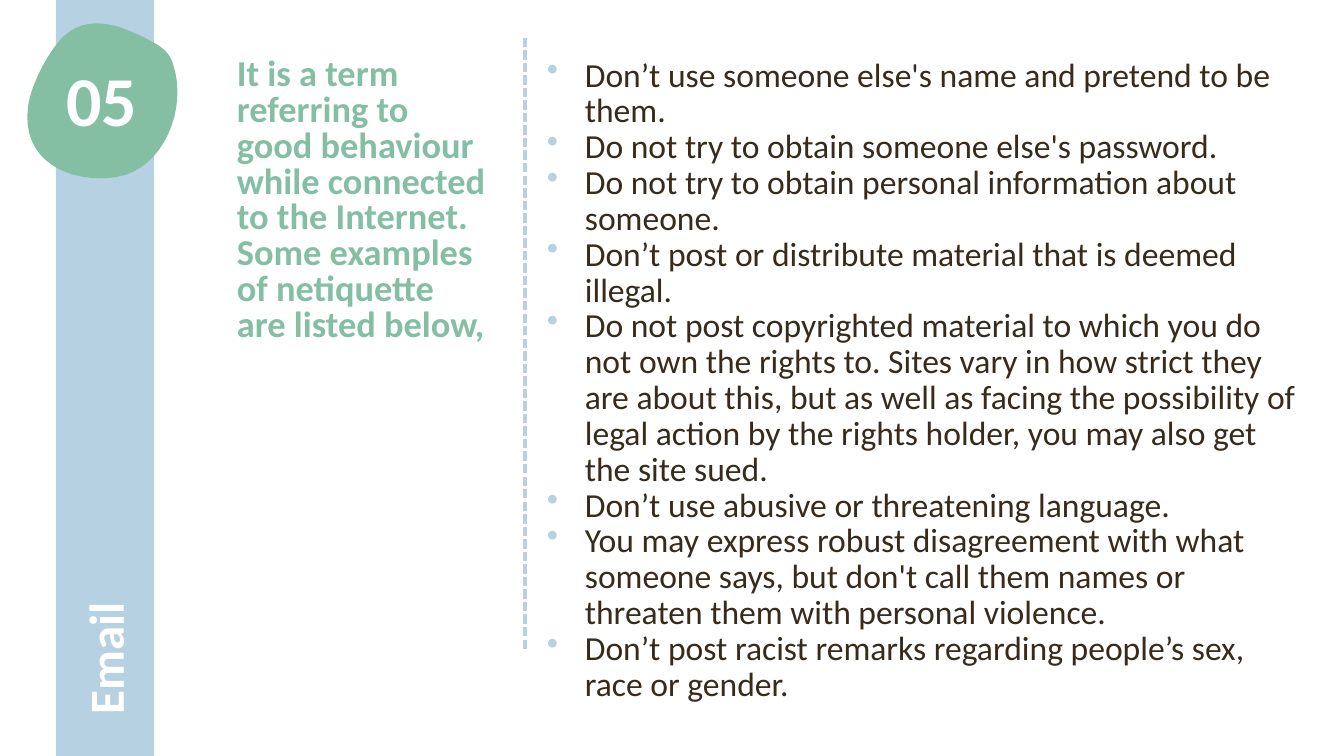
import lxml.etree
import pptx
import pptx.dml.color
import pptx.enum.dml
import pptx.enum.shapes
import pptx.enum.text
import pptx.oxml.ns
import pptx.util

EMU_PER_PX = 914400 / 100.8
COLOURS = {"blue": "B6D1E1", "green": "84BFA4", "white": "FFFFFF", "brown": "382B1B"}
ANCHOR = pptx.enum.text.MSO_ANCHOR
ALIGN = pptx.enum.text.PP_ALIGN

PEBBLE_START = (119, 27)
PEBBLE_CURVES = [
    ((99, 21), (78, 21), (61, 39)),
    ((46, 56), (31, 85), (28, 107)),
    ((21, 161), (69, 184), (117, 177)),
    ((164, 169), (188, 108), (173, 64)),
    ((169, 50), (157, 44), (145, 38)),
    ((137, 34), (128, 30), (119, 27)),
]

DEFINITION = (
    "It is a term referring to good behaviour while connected to the Internet. "
    "Some examples of netiquette are listed below,"
)
RULES = [
    "Don’t use someone else's name and pretend to be them.",
    "Do not try to obtain someone else's password.",
    "Do not try to obtain personal information about someone.",
    "Don’t post or distribute material that is deemed illegal.",
    "Do not post copyrighted material to which you do not own the rights to. "
    "Sites vary in how strict they are about this, but as well as facing the possibility "
    "of legal action by the rights holder, you may also get the site sued.",
    "Don’t use abusive or threatening language.",
    "You may express robust disagreement with what someone says, but don't call them "
    "names or threaten them with personal violence.",
    "Don’t post racist remarks regarding people’s sex, race or gender.",
]


def px(length):
    return pptx.util.Emu(round(length * EMU_PER_PX))


def colour(name):
    return pptx.dml.color.RGBColor.from_string(COLOURS[name])


def curve_points(start, first, second, end, steps=16):
    for step in range(1, steps + 1):
        t = step / steps
        u = 1 - t
        yield tuple(
            px(u**3 * a + 3 * u * u * t * b + 3 * u * t * t * c + t**3 * d)
            for a, b, c, d in zip(start, first, second, end)
        )


class SlideBuilder:
    def __init__(self, page, font):
        self.shapes = page.shapes
        self.font = font

    def paint(self, shape, fill):
        shape.shadow.inherit = False
        shape.fill.solid()
        shape.fill.fore_color.rgb = colour(fill)
        shape.line.fill.background()

    def rectangle(self, left, top, width, height, fill):
        kind = pptx.enum.shapes.MSO_SHAPE.RECTANGLE
        self.paint(self.shapes.add_shape(kind, px(left), px(top), px(width), px(height)), fill)

    def pebble(self, start, curves, fill):
        builder = self.shapes.build_freeform(px(start[0]), px(start[1]))
        points = []
        for first, second, end in curves:
            points.extend(curve_points(start, first, second, end))
            start = end
        builder.add_line_segments(points, close=True)
        self.paint(builder.convert_to_shape(), fill)

    def dashed_line(self, x, bottom, top, name, width):
        connector = self.shapes.add_connector(
            pptx.enum.shapes.MSO_CONNECTOR.STRAIGHT, px(x), px(bottom), px(x), px(top)
        )
        connector.line.color.rgb = colour(name)
        connector.line.width = pptx.util.Pt(width)
        connector.line.dash_style = pptx.enum.dml.MSO_LINE.SQUARE_DOT
        properties = connector._element.spPr
        lxml.etree.SubElement(properties, pptx.oxml.ns.qn("a:effectLst"))

    def bullet(self, para, name):
        properties = para._p.get_or_add_pPr()
        tint = lxml.etree.SubElement(properties, pptx.oxml.ns.qn("a:buClr"))
        lxml.etree.SubElement(tint, pptx.oxml.ns.qn("a:srgbClr"), val=COLOURS[name])
        lxml.etree.SubElement(properties, pptx.oxml.ns.qn("a:buChar"), char="•")

    def text(self, left, top, width, height, lines, size, name, spacing, bold=False,
             align=ALIGN.LEFT, anchor=ANCHOR.TOP, rotation=0, margin=0, indent=0, bullet=None):
        box = self.shapes.add_textbox(px(left), px(top), px(width), px(height))
        box.rotation = rotation
        frame = box.text_frame
        frame.word_wrap = True
        frame.vertical_anchor = anchor
        frame.text = "\n".join(lines)
        for para in frame.paragraphs:
            para.alignment = align
            para.line_spacing = spacing
            properties = para._p.get_or_add_pPr()
            properties.set("marL", str(px(margin)))
            properties.set("indent", str(px(indent)))
            if bullet:
                self.bullet(para, bullet)
            for span in para.runs:
                span.font.name = self.font
                span.font.size = pptx.util.Pt(size)
                span.font.bold = bold
                span.font.color.rgb = colour(name)
        return box


def main():
    deck = pptx.Presentation()
    deck.slide_width, deck.slide_height = px(1344), px(756)
    page = deck.slides.add_slide(deck.slide_layouts[6])
    slide = SlideBuilder(page, "Calibri")
    body_spacing = pptx.util.Pt(25.6)

    slide.rectangle(56, 0, 98, 756, "blue")
    slide.pebble(PEBBLE_START, PEBBLE_CURVES, "green")
    slide.text(-318, 265, 847, 72, ["Email"], 35, "white", pptx.util.Pt(40.2), bold=True,
               anchor=ANCHOR.MIDDLE, rotation=270)
    slide.text(17, 61, 170, 95, ["05"], 50, "white", 0.9, bold=True, align=ALIGN.CENTER)
    definition = slide.text(225, 53, 274, 342, [DEFINITION], 26, "green", body_spacing,
                            bold=True, margin=2)
    definition.text_frame.auto_size = pptx.enum.text.MSO_AUTO_SIZE.SHAPE_TO_FIT_TEXT
    slide.text(536, 53, 781, 555, RULES, 24, "brown", body_spacing,
               margin=39, indent=-38, bullet="blue")
    slide.dashed_line(525, 649, 36, "blue", 2.25)

    deck.save("out.pptx")


if __name__ == "__main__":
    main()
